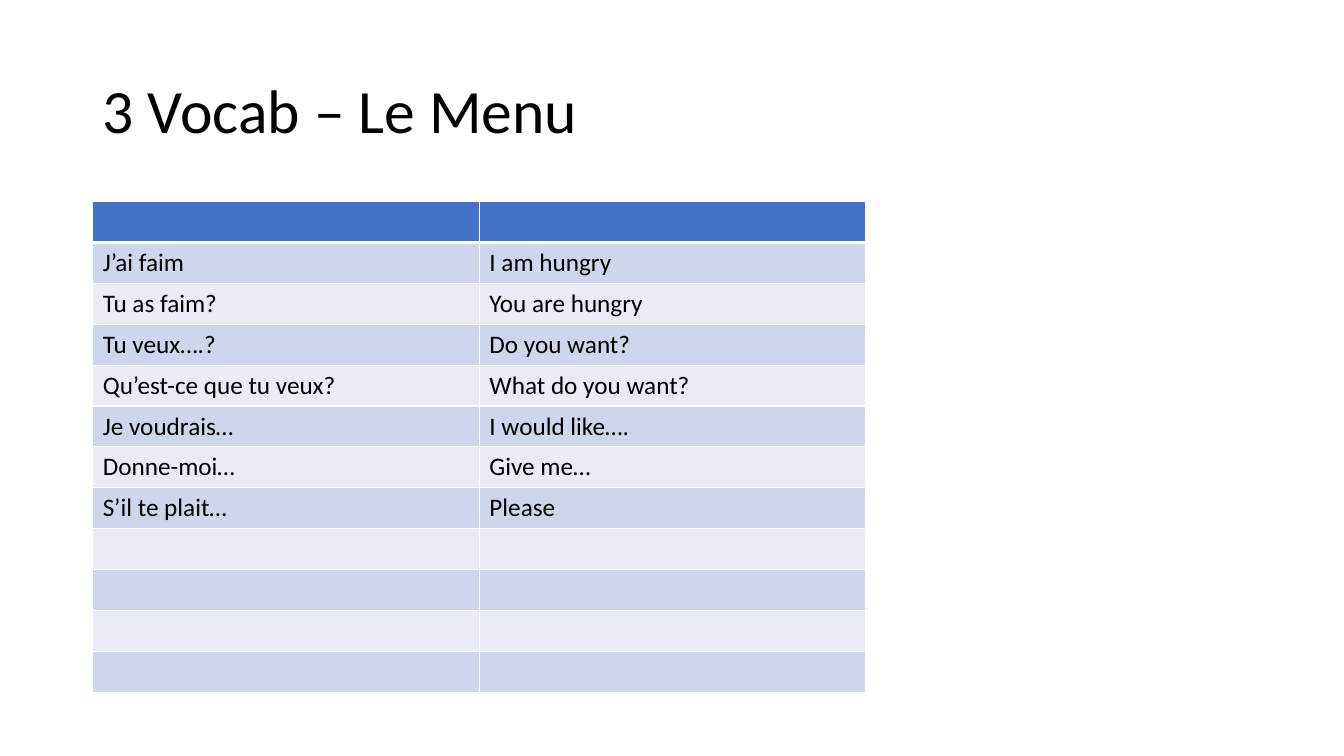
from typing import NamedTuple

from lxml import etree
from pptx import Presentation
from pptx import util as u
from pptx.dml.color import RGBColor
from pptx.enum import text
from pptx.oxml.ns import qn

SLIDE_WIDTH, SLIDE_HEIGHT = u.Inches(13.33), u.Inches(7.5)
FONT = "Calibri"
BLACK, WHITE = "000000", "FFFFFF"
HEADER_FILL = "4472C4"
BAND_FILLS = ("CFD5EA", "E9EBF5")
THIN, THICK = 1, 3


class Phrase(NamedTuple):
    french: str = ""
    english: str = ""


class Box(NamedTuple):
    """Left, top, width and height as shares of the slide's size."""
    left: float
    top: float
    width: float
    height: float

    def lengths(self) -> tuple[int, int, int, int]:
        return (int(self.left * SLIDE_WIDTH), int(self.top * SLIDE_HEIGHT),
                int(self.width * SLIDE_WIDTH), int(self.height * SLIDE_HEIGHT))


HEADING_BOX = Box(0.92 / 13.33, 0.4 / 7.5, 11.5 / 13.33, 1.45 / 7.5)
VOCAB_BOX = Box(0.92 / 13.33, 2 / 7.5, 7.67 / 13.33, 4.87 / 7.5)
BLANK_ROWS = 4
VOCAB = [
    Phrase(),
    Phrase("J’ai faim", "I am hungry"),
    Phrase("Tu as faim?", "You are hungry"),
    Phrase("Tu veux….?", "Do you want?"),
    Phrase("Qu’est-ce que tu veux?", "What do you want?"),
    Phrase("Je voudrais…", "I would like…."),
    Phrase("Donne-moi…", "Give me…"),
    Phrase("S’il te plait…", "Please"),
    *[Phrase()] * BLANK_ROWS,
]


def color(hex_value: str) -> RGBColor:
    return RGBColor.from_string(hex_value)


def format_paragraph(paragraph, size: float) -> None:
    paragraph.alignment = text.PP_ALIGN.LEFT
    paragraph.font.name = FONT
    paragraph.font.size = u.Pt(size)
    paragraph.font.color.rgb = color(BLACK)


def set_borders(cell, top: float, bottom: float) -> None:
    """Rule all four sides in white; call before filling the cell."""
    properties = cell._tc.get_or_add_tcPr()
    widths = {"a:lnL": THIN, "a:lnR": THIN, "a:lnT": top, "a:lnB": bottom}
    for side, width in widths.items():
        line = etree.SubElement(properties, qn(side), w=str(u.Pt(width)))
        fill = etree.SubElement(line, qn("a:solidFill"))
        etree.SubElement(fill, qn("a:srgbClr"), val=WHITE)


def add_heading(slide, wording: str) -> None:
    heading = slide.shapes.title
    heading.left, heading.top, heading.width, heading.height = HEADING_BOX.lengths()
    frame = heading.text_frame
    frame.text = wording
    frame.vertical_anchor = text.MSO_ANCHOR.MIDDLE
    format_paragraph(frame.paragraphs[0], 44)
    frame.paragraphs[0].line_spacing = 0.9


def add_vocab(slide, phrases: list[Phrase]) -> None:
    vocab = slide.shapes.add_table(
        len(phrases), len(Phrase._fields), *VOCAB_BOX.lengths()).table
    for row, phrase in enumerate(phrases):
        for column, wording in enumerate(phrase):
            cell = vocab.cell(row, column)
            cell.text = wording
            format_paragraph(cell.text_frame.paragraphs[0], 18)
            set_borders(cell, top=THICK if row == 1 else THIN,
                        bottom=THICK if row == 0 else THIN)
            cell.fill.solid()
            fill = BAND_FILLS[(row - 1) % 2] if row else HEADER_FILL
            cell.fill.fore_color.rgb = color(fill)


def main() -> None:
    deck = Presentation()
    deck.slide_width, deck.slide_height = SLIDE_WIDTH, SLIDE_HEIGHT
    title_only = deck.slide_layouts[5]
    slide = deck.slides.add_slide(title_only)
    add_heading(slide, "3 Vocab – Le Menu")
    add_vocab(slide, VOCAB)
    deck.save("out.pptx")


if __name__ == "__main__":
    main()
